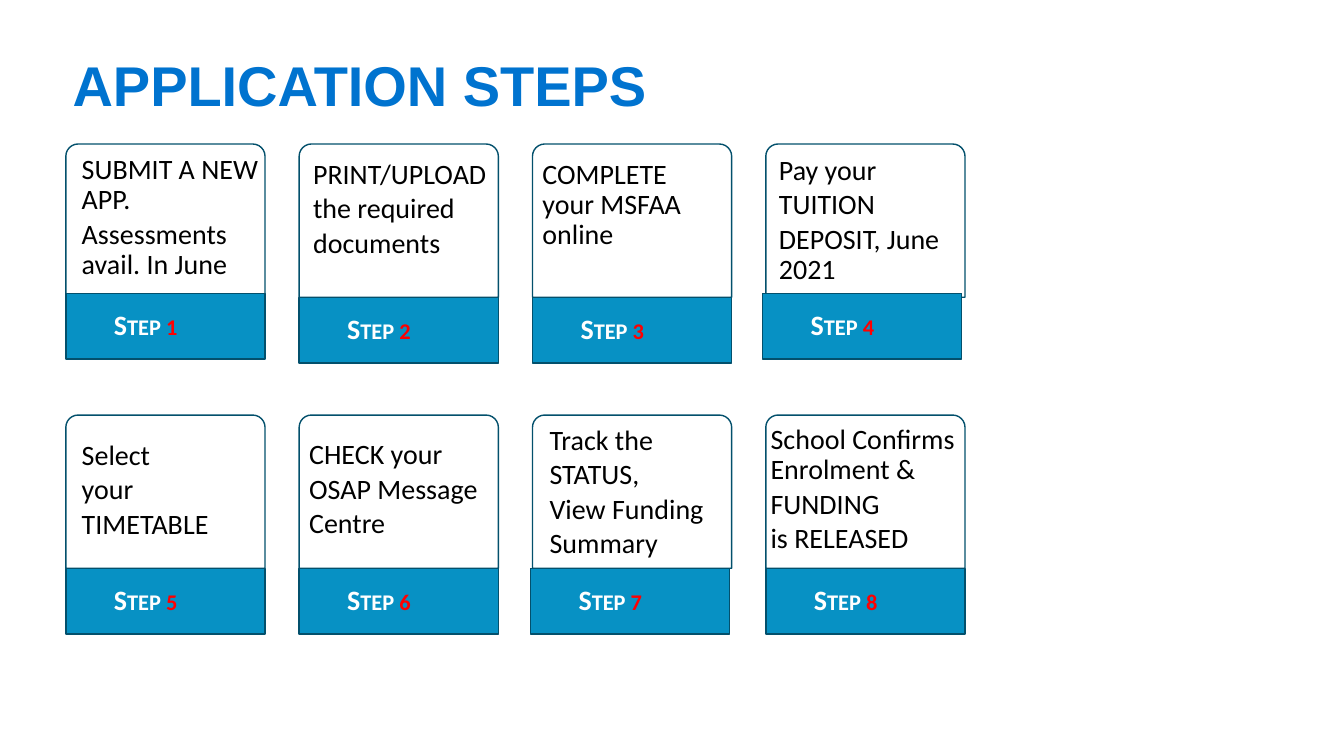
from dataclasses import dataclass

from pptx import Presentation
from pptx.dml.color import RGBColor
from pptx.enum.shapes import MSO_SHAPE
from pptx.enum.text import MSO_ANCHOR, PP_ALIGN
from pptx.util import Cm, Pt

CARD_SHAPE = MSO_SHAPE.ROUND_2_SAME_RECTANGLE
BAND_SHAPE = MSO_SHAPE.RECTANGLE
LEFT, CENTER = PP_ALIGN.LEFT, PP_ALIGN.CENTER
TOP, MIDDLE = MSO_ANCHOR.TOP, MSO_ANCHOR.MIDDLE

WHITE, BLACK, RED = "FFFFFF", "000000", "FF0000"
TITLE_BLUE, BAND_BLUE, OUTLINE = "0073CF", "0791C4", "03506C"

# Grid of step cards, in centimetres
COLUMNS = 4
GRID_LEFT, GRID_TOP = 1.66, 3.63
COLUMN_PITCH, ROW_PITCH = 5.88, 6.83
CARD_WIDTH, CARD_HEIGHT, BAND_HEIGHT = 5.02, 3.86, 1.66


@dataclass
class Step:
    lines: list
    text_shift: tuple
    text_width: float = 4.95
    band_shift: tuple = (0, 0)


STEPS = [
    Step(["SUBMIT A NEW APP.", "Assessments avail. In June"], (0.15, 0.15), band_shift=(0, -0.1)),
    Step(["PRINT/UPLOAD", "the required", "documents"], (0.1, 0.28)),
    Step(["COMPLETE your MSFAA online"], (0, 0.28), text_width=4.52),
    Step(["Pay your", "TUITION", "DEPOSIT, June 2021"], (0.08, 0.18), band_shift=(-0.08, -0.1)),
    Step(["Select", "your", "TIMETABLE"], (0.15, 0.53)),
    Step(["CHECK your", "OSAP Message", "Centre"], (0, 0.51)),
    Step(["Track the", "STATUS,", "View Funding", "Summary"], (0.18, 0.15), band_shift=(-0.05, 0)),
    Step(["School Confirms Enrolment &", "FUNDING", "is RELEASED"], (-0.13, 0.13), text_width=5.28),
]


def color(value):
    return RGBColor.from_string(value)


def add_span(para, text, *, size=20, font="Calibri", fill=BLACK, bold=False, small_caps=False):
    span = para.add_run()
    span.text = text
    span.font.size = Pt(size)
    span.font.name = font
    span.font.bold = bold
    span.font.color.rgb = color(fill)
    if small_caps:
        span.font._element.set("cap", "small")


def set_frame(frame, *, anchor=TOP, insets=(0.25, 0.13, 0.25, 0.13)):
    frame.word_wrap = True
    frame.vertical_anchor = anchor
    frame.margin_left, frame.margin_top, frame.margin_right, frame.margin_bottom = map(Cm, insets)


def set_para(para, *, align=LEFT, after=3):
    para.alignment = align
    para.line_spacing = 0.9
    para.space_after = Pt(after)


def add_panel(page, kind, left, top, width, height, fill):
    panel = page.shapes.add_shape(kind, Cm(left), Cm(top), Cm(width), Cm(height))
    panel.shadow.inherit = False
    panel.fill.solid()
    panel.fill.fore_color.rgb = color(fill)
    panel.line.color.rgb = color(OUTLINE)
    panel.line.width = Pt(1)
    return panel


def add_title(page, left, top, width, height):
    title = page.shapes.title
    title.left, title.top, title.width, title.height = map(Cm, (left, top, width, height))
    set_frame(title.text_frame, anchor=MIDDLE, insets=(0.76, 0.13, 0.25, 0.13))
    para = title.text_frame.paragraphs[0]
    para.alignment = LEFT
    add_span(para, "APPLICATION STEPS", size=40, font="Arial", fill=TITLE_BLUE, bold=True)


def add_step(page, number, step, left, top):
    # Card with rounded top corners
    card = add_panel(page, CARD_SHAPE, left, top, CARD_WIDTH, CARD_HEIGHT, WHITE)
    card.adjustments[0] = 0.08

    # Band with the step number
    band_left, band_top = left + step.band_shift[0], top + CARD_HEIGHT + step.band_shift[1]
    band = add_panel(page, BAND_SHAPE, band_left, band_top, CARD_WIDTH, BAND_HEIGHT, BAND_BLUE)
    set_frame(band.text_frame, anchor=MIDDLE, insets=(0.3, 0, 1.3, 0))
    label = band.text_frame.paragraphs[0]
    set_para(label, align=CENTER, after=7)
    add_span(label, "Step ", fill=WHITE, bold=True, small_caps=True)
    add_span(label, str(number), fill=RED, bold=True, small_caps=True)

    # Instruction on the card
    shift_x, shift_y = step.text_shift
    box = page.shapes.add_textbox(Cm(left + shift_x), Cm(top + shift_y),
                                  Cm(step.text_width), Cm(CARD_HEIGHT - shift_y))
    frame = box.text_frame
    set_frame(frame)
    for index, line in enumerate(step.lines):
        para = frame.add_paragraph() if index else frame.paragraphs[0]
        set_para(para)
        add_span(para, line)


def add_steps(page, left, top):
    for index, step in enumerate(STEPS):
        row, column = divmod(index, COLUMNS)
        add_step(page, index + 1, step, left + column * COLUMN_PITCH, top + row * ROW_PITCH)


def main():
    deck = Presentation()
    deck.slide_width, deck.slide_height = Cm(33.87), Cm(19.05)
    page = deck.slides.add_slide(deck.slide_layouts[5])
    add_title(page, 1.07, 1.27, 21.16, 1.7)
    add_steps(page, GRID_LEFT, GRID_TOP)
    deck.save("out.pptx")


if __name__ == "__main__":
    main()
